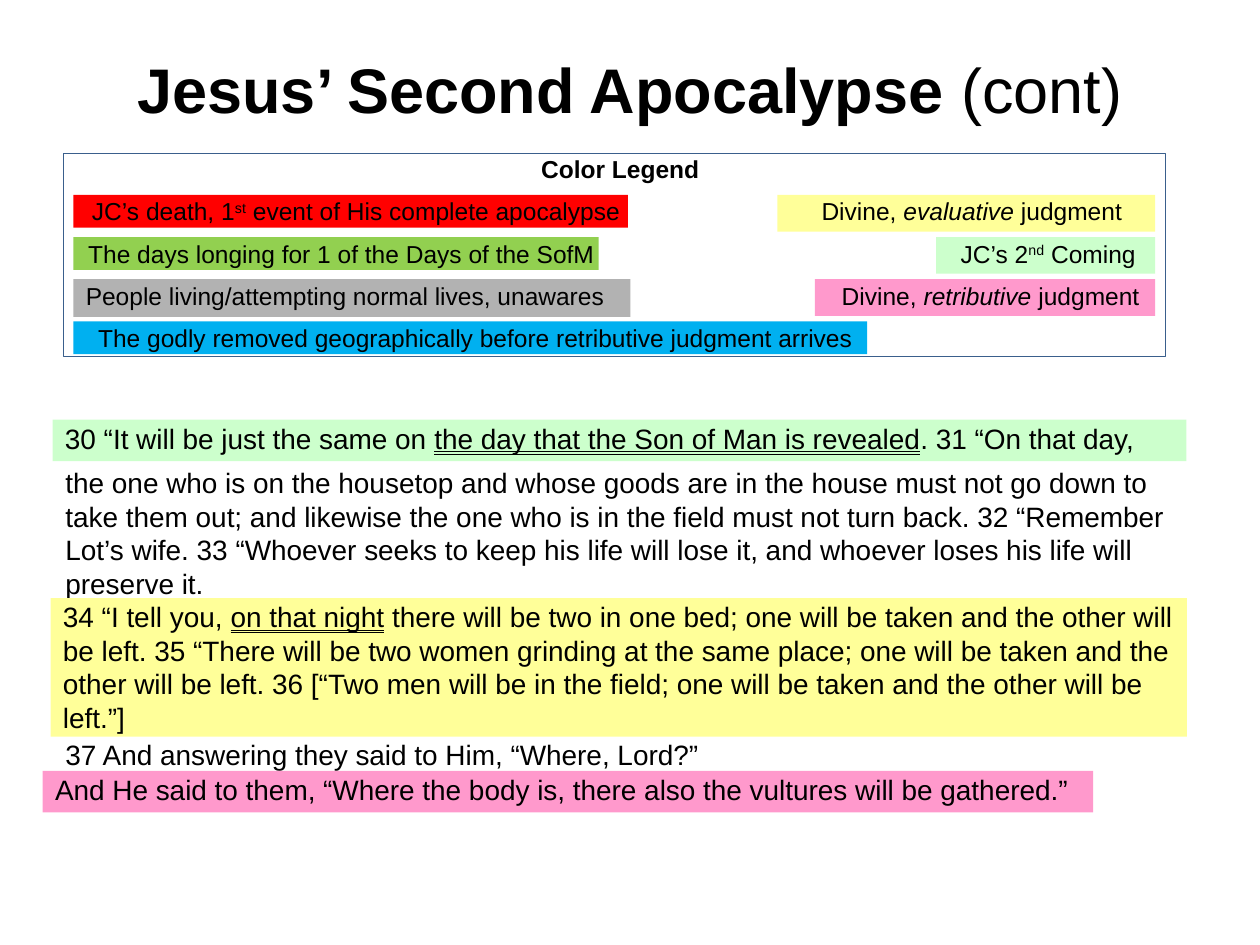
from pptx import Presentation
from pptx.dml.color import RGBColor
from pptx.enum.shapes import MSO_SHAPE
from pptx.enum.text import MSO_ANCHOR, MSO_UNDERLINE, PP_ALIGN
from pptx.util import Cm, Pt

BLACK = RGBColor(0x00, 0x00, 0x00)
RED = RGBColor(0xFF, 0x00, 0x00)
GREEN = RGBColor(0x92, 0xD0, 0x50)
GRAY = RGBColor(0xB2, 0xB2, 0xB2)
BLUE = RGBColor(0x00, 0xB0, 0xF0)
MINT = RGBColor(0xCC, 0xFF, 0xCC)
YELLOW = RGBColor(0xFF, 0xFF, 0x99)
PINK = RGBColor(0xFF, 0x99, 0xCC)
FRAME = RGBColor(0x3A, 0x5F, 0x8C)

LEFT, CENTER = PP_ALIGN.LEFT, PP_ALIGN.CENTER
BOLD = {"bold": True}
ITALIC = {"italic": True}
DOUBLE = {"underline": MSO_UNDERLINE.DOUBLE_LINE}
RAISED = {"superscript": True}

# A text is a list of (words, format) spans.
TITLE = [("Jesus’ Second Apocalypse ", BOLD), ("(cont)", {})]
LEGEND_TITLE = [("Color Legend", BOLD)]

# row, width, height, fill, alignment, left margin, spans
LEGEND_LEFT = [
    (0, 11.18, 0.66, RED, CENTER, 0.25,
     [("JC’s death, 1", {}), ("st", RAISED), (" event of His complete apocalypse", {})]),
    (1, 10.59, 0.66, GREEN, CENTER, 0.25,
     [("The days longing for 1 of the Days of the SofM", {})]),
    (2, 11.23, 0.76, GRAY, LEFT, 0.25,
     [("People living/attempting normal lives, unawares", {})]),
    (3, 16, 0.66, BLUE, CENTER, 0.25,
     [("The godly removed geographically before retributive judgment arrives", {})]),
]
LEGEND_RIGHT = [
    (0, 7.62, 0.74, YELLOW, CENTER, 0.25,
     [("Divine, ", {}), ("evaluative", ITALIC), (" judgment", {})]),
    (1, 4.42, 0.74, MINT, CENTER, 0.13,
     [("JC’s 2", {}), ("nd", RAISED), (" Coming", {})]),
    (2, 6.86, 0.74, PINK, CENTER, 0.25,
     [("Divine, ", {}), ("retributive", ITALIC), (" judgment", {})]),
]
LEGEND_START, LEGEND_END = 1.48, 23.29
ROW_TOP, ROW_PITCH = 3.93, 0.85

# left, top, width, height, fill, spans
VERSES = [
    (1.06, 8.46, 22.86, 0.84, MINT,
     [("30 “It will be just the same on ", {}),
      ("the day that the Son of Man is revealed", DOUBLE),
      (". 31 “On that day,", {})]),
    (1.07, 9.36, 22.86, 2.54, None,
     [("the one who is on the housetop and whose goods are in the house must not go "
       "down to take them out; and likewise the one who is in the field must not turn "
       "back. 32 “Remember Lot’s wife. 33 “Whoever seeks to keep his life will lose it, "
       "and whoever loses his life will preserve it.", {})]),
    (1.02, 12.06, 22.91, 2.79, YELLOW,
     [("34 “I tell you, ", {}), ("on that night", DOUBLE),
      (" there will be two in one bed; one will be taken and the other will be left. "
       "35 “There will be two women grinding at the same place; one will be taken and "
       "the other will be left. 36 [“Two men will be in the field; one will be taken "
       "and the other will be left.”]", {})]),
    (1.07, 14.83, 13.34, 0.84, None,
     [("37 And answering they said to Him, “Where, Lord?”", {})]),
    (0.86, 15.54, 21.18, 0.84, PINK,
     [("And He said to them, “Where the body is, there also the vultures will be "
       "gathered.”", {})]),
]


def add_block(page, place, fill, spans, size, align=LEFT, anchor=MSO_ANCHOR.TOP, margin=0.25):
    """Add one paragraph of text, on a filled rectangle if a fill is given."""
    area = [Cm(length) for length in place]
    if fill is None:
        box = page.shapes.add_textbox(*area)
    else:
        box = page.shapes.add_shape(MSO_SHAPE.RECTANGLE, *area)
        box.shadow.inherit = False
        box.fill.solid()
        box.fill.fore_color.rgb = fill
        box.line.fill.background()
    frame = box.text_frame
    settings = {"word_wrap": True, "vertical_anchor": anchor, "margin_left": Cm(margin),
                "margin_right": Cm(0.03), "margin_top": Cm(0.03), "margin_bottom": Cm(0.03)}
    for name, value in settings.items():
        setattr(frame, name, value)
    para = frame.paragraphs[0]
    para.alignment = align
    for words, formats in spans:
        span = para.add_run()
        span.text = words
        font = span.font
        font.color.rgb = BLACK
        for name, value in {"name": "Arial", "size": Pt(size), **formats}.items():
            if name == "superscript":
                font._element.set("baseline", "30000")
            else:
                setattr(font, name, value)


def add_legend(page):
    for entries, at_right in ((LEGEND_LEFT, False), (LEGEND_RIGHT, True)):
        for row, width, height, fill, align, margin, spans in entries:
            left = LEGEND_END - width if at_right else LEGEND_START
            place = (left, ROW_TOP + row * ROW_PITCH, width, height)
            add_block(page, place, fill, spans, 14, align, margin=margin)
    border = page.shapes.add_shape(MSO_SHAPE.RECTANGLE, Cm(1.27), Cm(3.08), Cm(22.23), Cm(4.11))
    border.shadow.inherit = False
    border.fill.background()
    border.line.color.rgb = FRAME
    border.line.width = Pt(0.25)
    add_block(page, (10.59, 3.07, 3.61, 0.74), None, LEGEND_TITLE, 14, CENTER)


def main():
    deck = Presentation()
    deck.slide_width, deck.slide_height = Cm(25.4), Cm(19.05)
    page = deck.slides.add_slide(deck.slide_layouts[6])
    add_block(page, (1.27, 0.76, 22.86, 2.03), None, TITLE, 36, CENTER,
              MSO_ANCHOR.MIDDLE, margin=0.03)
    for *place, fill, spans in VERSES:
        add_block(page, place, fill, spans, 16)
    add_legend(page)
    deck.save("out.pptx")


if __name__ == "__main__":
    main()
